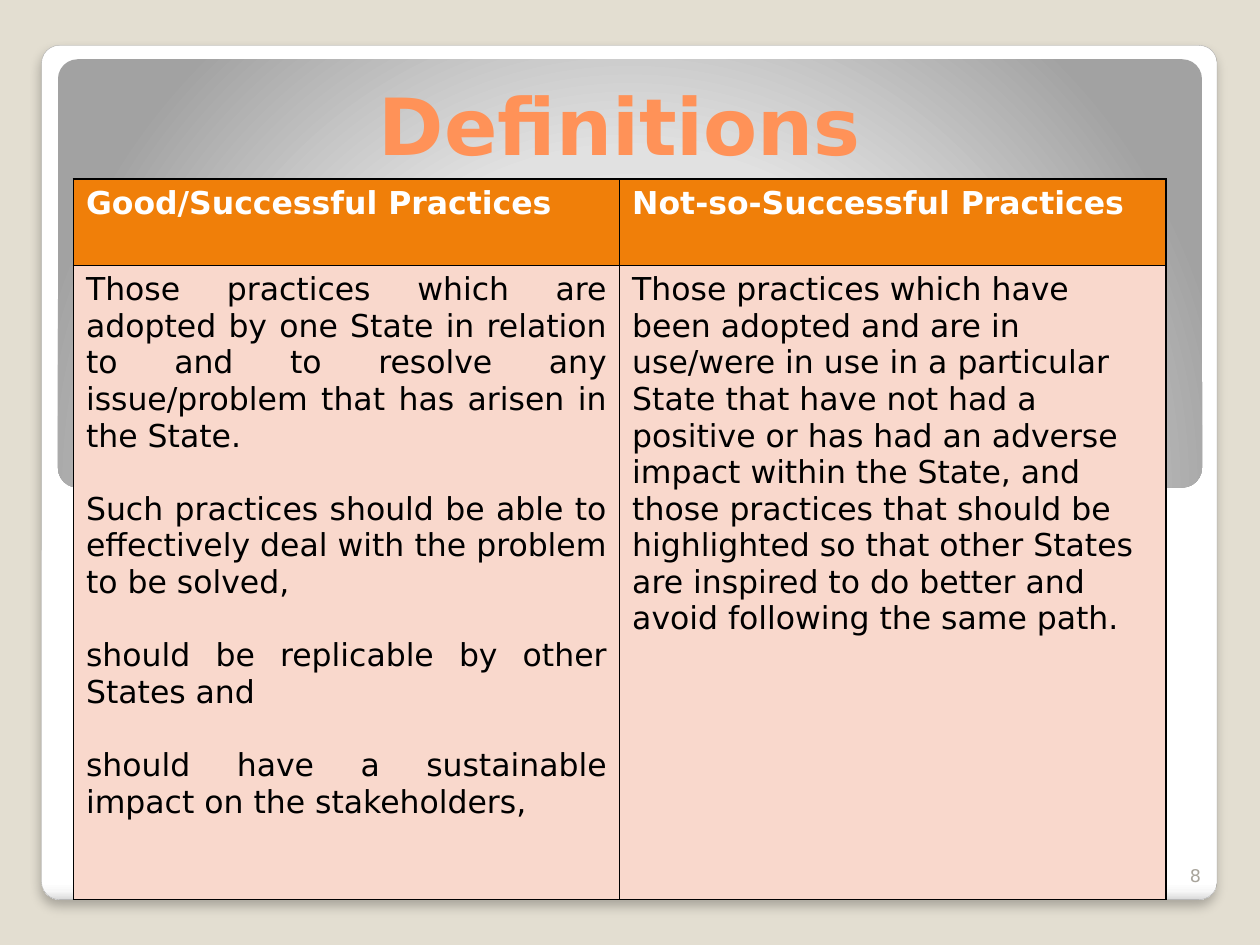
import pptx
import pptx.util
import pptx.dml.color
import pptx.enum.shapes
import pptx.enum.text
import pptx.oxml
import pptx.oxml.ns
from lxml import etree

RGB = pptx.dml.color.RGBColor
ALIGN = pptx.enum.text.PP_ALIGN
Pt = pptx.util.Pt
qn = pptx.oxml.ns.qn

WIDTH, HEIGHT = pptx.util.Inches(10), pptx.util.Inches(7.5)
FONT = "DejaVu Sans"
BEIGE = RGB(0xE3, 0xDE, 0xD1)
WHITE = RGB(0xFF, 0xFF, 0xFF)
NEAR_WHITE = RGB(0xF7, 0xF7, 0xF7)
EDGE_GRAY = RGB(0xDA, 0xDA, 0xDA)
LIGHT_GRAY = RGB(0xE1, 0xE1, 0xE1)
DARK_GRAY = RGB(0xA2, 0xA2, 0xA2)
OUTLINE_GRAY = RGB(0xA4, 0xA4, 0xA4)
NUMBER_GRAY = RGB(0xA8, 0xA4, 0x9B)
BLACK = RGB(0, 0, 0)
TITLE_ORANGE = RGB(0xFF, 0x92, 0x58)
HEADER_ORANGE = RGB(0xF0, 0x7F, 0x09)
PALE_PINK = RGB(0xF9, 0xD8, 0xCC)

# Boxes as percentages of the slide: left, top, width, height
CARD_BOX = (3.3, 4.8, 93.3, 90.4)
BACKDROP_BOX = (4.6, 6.27, 90.8, 45.33)
TITLE_BOX = (6.7, 6.67, 85, 12.13)
TABLE_BOX = (5.83, 18.93, 86.7, 76.27)
NUMBER_BOX = (91.3, 89.07, 5, 5.33)
HEADER_SHARE = 0.12

DEFINITIONS = {
    "Good/Successful Practices": (ALIGN.JUSTIFY, [
        "Those practices which are adopted by one State in relation to and to "
        "resolve any issue/problem that has arisen in the State.",
        "Such practices should be able to effectively deal with the problem "
        "to be solved,",
        "should be replicable by other States and",
        "should have a sustainable impact on the stakeholders,",
    ]),
    "Not-so-Successful Practices": (ALIGN.LEFT, [
        "Those practices which have been adopted and are in use/were in use in "
        "a particular State that have not had a positive or has had an adverse "
        "impact within the State, and those practices that should be "
        "highlighted so that other States are inspired to do better and avoid "
        "following the same path.",
    ]),
}


def to_emu(box):
    return [int(share * side / 100)
            for share, side in zip(box, (WIDTH, HEIGHT) * 2)]


def write(frame, paragraphs, align, size, color, bold=False, gap=0):
    frame.word_wrap = True
    for index, text in enumerate(paragraphs):
        paragraph = frame.paragraphs[0] if index == 0 else frame.add_paragraph()
        paragraph.alignment = align
        paragraph.space_before = Pt(gap if index else 0)
        run = paragraph.add_run()
        run.text = text
        for name, value in {"name": FONT, "size": Pt(size), "bold": bold}.items():
            setattr(run.font, name, value)
        run.font.color.rgb = color


def add_text(slide, box, text, **style):
    frame = slide.shapes.add_textbox(*to_emu(box)).text_frame
    frame.vertical_anchor = pptx.enum.text.MSO_ANCHOR.BOTTOM
    write(frame, [text], **style)
    return frame


def add_rounded_panel(slide, box, corner, stops, direction):
    """Rounded rectangle whose gradient runs through (percent, colour) stops."""
    panel = slide.shapes.add_shape(
        pptx.enum.shapes.MSO_SHAPE.ROUNDED_RECTANGLE, *to_emu(box))
    panel.adjustments[0] = corner
    panel.shadow.inherit = False
    panel.line.fill.background()
    panel.fill.gradient()
    gradient = panel._element.spPr.find(qn("a:gradFill"))
    for child in list(gradient):
        gradient.remove(child)
    stop_list = etree.SubElement(gradient, qn("a:gsLst"))
    for percent, color in stops:
        stop = etree.SubElement(stop_list, qn("a:gs"), pos=str(percent * 1000))
        etree.SubElement(stop, qn("a:srgbClr"), val=str(color))
    gradient.append(direction)
    return panel


def add_card(slide, box):
    downward = etree.Element(qn("a:lin"), ang="5400000", scaled="0")
    card = add_rounded_panel(
        slide, box, 0.021,
        [(0, WHITE), (98, WHITE), (99, NEAR_WHITE), (100, EDGE_GRAY)], downward)
    card.line.color.rgb = OUTLINE_GRAY
    card.line.width = Pt(0.16)
    shadow = etree.SubElement(
        card._element.spPr.find(qn("a:effectLst")), qn("a:outerShdw"),
        blurRad=str(Pt(6)), dist=str(Pt(4)), dir="5400000", rotWithShape="0")
    color = etree.SubElement(shadow, qn("a:srgbClr"), val=str(BLACK))
    etree.SubElement(color, qn("a:alpha"), val="25000")


def add_backdrop(slide, box):
    radial = etree.Element(qn("a:path"), path="circle")
    etree.SubElement(radial, qn("a:fillToRect"),
                     l="50000", t="175000", r="50000", b="-75000")
    add_rounded_panel(slide, box, 0.046,
                      [(0, WHITE), (55, LIGHT_GRAY), (100, DARK_GRAY)], radial)


def add_title(slide, box, text):
    frame = add_text(slide, box, text, align=ALIGN.CENTER, size=45,
                     color=TITLE_ORANGE, bold=True)
    for side in ("left", "top", "right", "bottom"):
        setattr(frame, f"margin_{side}", pptx.util.Inches(0.05))


def style_cell(cell, color):
    properties = cell._tc.get_or_add_tcPr()
    for side in ("lnL", "lnR", "lnT", "lnB"):
        border = etree.SubElement(properties, qn(f"a:{side}"), w=str(Pt(1)))
        fill = etree.SubElement(border, qn("a:solidFill"))
        etree.SubElement(fill, qn("a:srgbClr"), val=str(BLACK))
    cell.fill.solid()
    cell.fill.fore_color.rgb = color


def add_definitions(slide, box, definitions):
    left, top, width, height = to_emu(box)
    table = slide.shapes.add_table(
        2, len(definitions), left, top, width, height).table
    table.rows[0].height = int(height * HEADER_SHARE)
    table.rows[1].height = height - table.rows[0].height
    for column, (heading, (align, meanings)) in enumerate(definitions.items()):
        header, body = table.cell(0, column), table.cell(1, column)
        style_cell(header, HEADER_ORANGE)
        style_cell(body, PALE_PINK)
        write(header.text_frame, [heading], ALIGN.LEFT, 18, WHITE, bold=True)
        write(body.text_frame, meanings, align, 18, BLACK, gap=21)


def main():
    deck = pptx.Presentation()
    deck.slide_width, deck.slide_height = WIDTH, HEIGHT
    slide = deck.slides.add_slide(deck.slide_layouts[6])
    slide.background.fill.solid()
    slide.background.fill.fore_color.rgb = BEIGE
    add_card(slide, CARD_BOX)
    add_backdrop(slide, BACKDROP_BOX)
    add_title(slide, TITLE_BOX, "Definitions")
    add_definitions(slide, TABLE_BOX, DEFINITIONS)
    add_text(slide, NUMBER_BOX, "8", align=ALIGN.RIGHT, size=10,
             color=NUMBER_GRAY)
    deck.save("out.pptx")


if __name__ == "__main__":
    main()
